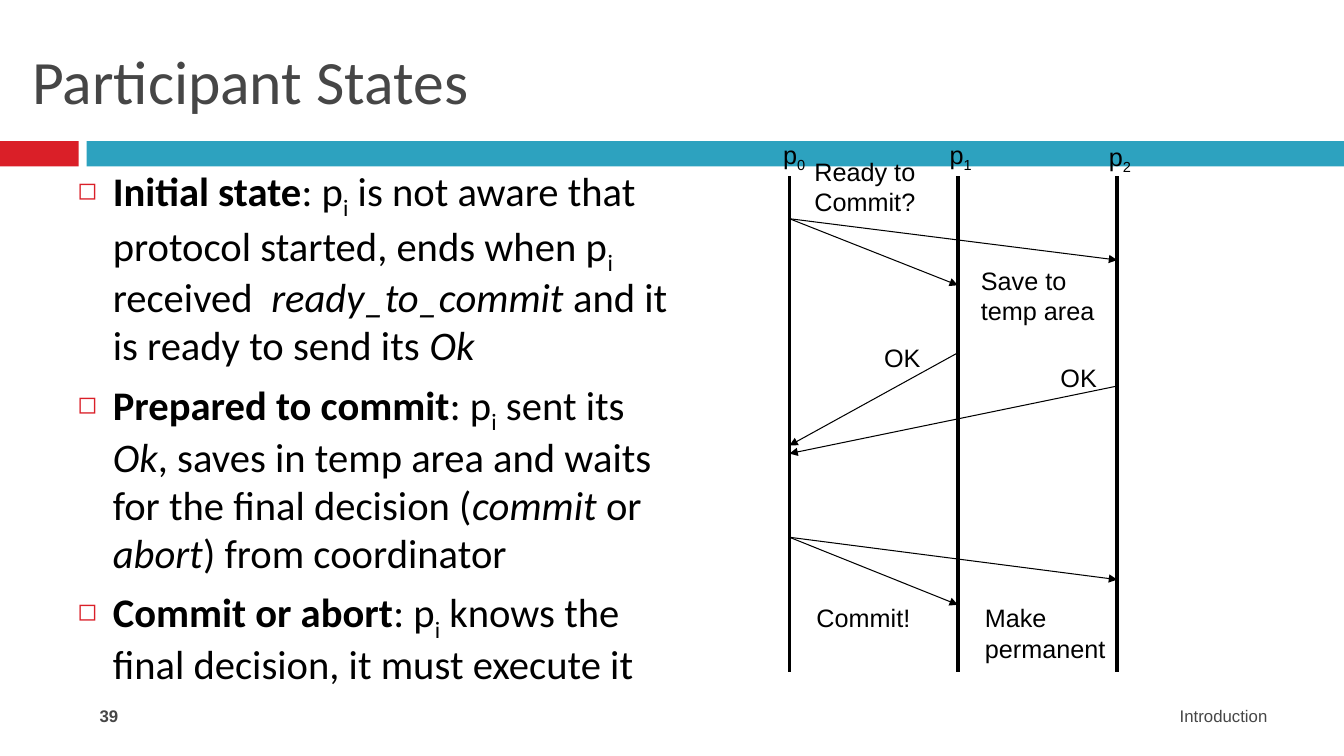
"""Build the "Participant States" slide: three commit states beside a message timeline."""
from dataclasses import dataclass

from lxml.etree import SubElement
from pptx import Presentation
from pptx.dml.color import RGBColor
from pptx.enum.shapes import MSO_CONNECTOR, MSO_SHAPE
from pptx.enum.text import MSO_ANCHOR, PP_ALIGN
from pptx.oxml.ns import qn
from pptx.util import Inches, Pt


@dataclass(frozen=True)
class Theme:
    red: str = "DA1F28"
    teal: str = "2DA2BF"
    grey: str = "464646"
    black: str = "000000"
    heading_font: str = "Calibri"
    label_font: str = "Arial"
    title_size: float = 44
    body_size: float = 29
    label_size: float = 18
    footer_size: float = 12
    lifeline_width: float = 2.5
    message_width: float = 0.75


THEME = Theme()

TITLE = "Participant States"
BANDS = [(0, 0.78, THEME.red), (0.86, 12.47, THEME.teal)]

STATES = [
    [("Initial state", "bold"), (": p", ""), ("i", "sub"),
     (" is not aware that protocol started, ends when p", ""), ("i", "sub"),
     (" received  ", ""), ("ready_to_commit", "italic"),
     (" and it is ready to send its ", ""), ("Ok", "italic")],
    [("Prepared to commit", "bold"), (": p", ""), ("i", "sub"),
     (" sent its ", ""), ("Ok", "italic"),
     (", saves in temp area and waits for the final decision (", ""),
     ("commit", "italic"), (" or ", ""), ("abort", "italic"),
     (") from coordinator", "")],
    [("Commit or abort", "bold"), (": p", ""), ("i", "sub"),
     (" knows the final decision, it must execute it", "")],
]

LIFELINES = [7.83, 9.5, 11.08]
LIFELINE_TOP, LIFELINE_BOTTOM = 1.75, 6.67
PROCESS_LABELS = [(7.67, 1.33), (9.32, 1.33), (10.9, 1.35)]

# sender, time sent, receiver, time received
MESSAGES = [
    (0, 2.17, 2, 2.58), (0, 2.17, 1, 2.83),
    (1, 3.5, 0, 4.42), (2, 3.83, 0, 4.5),
    (0, 5.33, 2, 5.75), (0, 5.33, 1, 6),
]

# lines, left, top, width, wrap
EVENTS = [
    (["Ready to", "Commit?"], 7.98, 1.5, 1.2, False),
    (["Save to temp area"], 9.63, 2.58, 1.62, True),
    (["OK"], 8.67, 3.35, 0.56, False),
    (["OK"], 10.42, 3.55, 0.56, False),
    (["Commit!"], 8, 5.93, 1.13, False),
    (["Make", "permanent"], 9.67, 5.93, 1.4, False),
]

# text, left, width, alignment, style
FOOTERS = [
    ("Introduction", 7.56, 5.11, PP_ALIGN.RIGHT, ""),
    ("39", 0.89, 2.89, PP_ALIGN.LEFT, "bold"),
]


def add_run(paragraph, text, style, size, font, color):
    run = paragraph.add_run()
    run.text = text
    run.font.size = Pt(size)
    run.font.name = font
    run.font.color.rgb = RGBColor.from_string(color)
    run.font.bold = style == "bold"
    run.font.italic = style == "italic"
    if style == "sub":
        run.font._element.set("baseline", "-25000")


def add_text(slide, box, paragraphs, size, font, color, wrap=True):
    frame = slide.shapes.add_textbox(*map(Inches, box)).text_frame
    frame.word_wrap = wrap
    for index, runs in enumerate(paragraphs):
        paragraph = frame.paragraphs[0] if index == 0 else frame.add_paragraph()
        for text, style in runs:
            add_run(paragraph, text, style, size, font, color)
    return frame


def add_bullet(paragraph):
    properties = paragraph._p.get_or_add_pPr()
    properties.set("marL", str(Inches(0.35)))
    properties.set("indent", str(-Inches(0.35)))
    color = SubElement(properties, qn("a:buClr"))
    SubElement(color, qn("a:srgbClr"), val=THEME.red)
    SubElement(properties, qn("a:buSzPct"), val="60000")
    SubElement(properties, qn("a:buChar"), char="◻")


def add_line(slide, start, end, width, arrow=False):
    line = slide.shapes.add_connector(
        MSO_CONNECTOR.STRAIGHT, *map(Inches, (*start, *end)))
    line.line.color.rgb = RGBColor.from_string(THEME.black)
    line.line.width = Pt(width)
    if arrow:
        SubElement(line.line._get_or_add_ln(), qn("a:tailEnd"), type="triangle")
    SubElement(line._element.spPr, qn("a:effectLst"))


def add_heading(slide):
    for left, width, color in BANDS:
        band = slide.shapes.add_shape(
            MSO_SHAPE.RECTANGLE, *map(Inches, (left, 1.4, width, 0.25)))
        band.shadow.inherit = False
        band.fill.solid()
        band.fill.fore_color.rgb = RGBColor.from_string(color)
        band.line.fill.background()
    title = slide.shapes.title
    title.left, title.top, title.width, title.height = map(
        Inches, (0.22, 0.25, 12.89, 1.08))
    title.text_frame.vertical_anchor = MSO_ANCHOR.MIDDLE
    heading = title.text_frame.paragraphs[0]
    heading.alignment = PP_ALIGN.LEFT
    add_run(heading, TITLE, "", THEME.title_size, THEME.heading_font, THEME.grey)


def add_states(slide):
    frame = add_text(slide, (0.67, 1.6, 6.25, 5.4), STATES,
                     THEME.body_size, THEME.heading_font, THEME.black)
    for paragraph in frame.paragraphs:
        paragraph.space_before = Pt(7)
        paragraph.line_spacing = 0.98
        add_bullet(paragraph)


def add_timeline(slide):
    label_style = (THEME.label_size, THEME.label_font, THEME.black)
    for x in LIFELINES:
        add_line(slide, (x, LIFELINE_TOP), (x, LIFELINE_BOTTOM), THEME.lifeline_width)
    for number, (left, top) in enumerate(PROCESS_LABELS):
        add_text(slide, (left, top, 0.43, 0.4),
                 [[("p", ""), (str(number), "sub")]], *label_style, wrap=False)
    for sender, sent, receiver, received in MESSAGES:
        add_line(slide, (LIFELINES[sender], sent), (LIFELINES[receiver], received),
                 THEME.message_width, arrow=True)
    for lines, left, top, width, wrap in EVENTS:
        height = 0.7 if wrap or len(lines) > 1 else 0.4
        add_text(slide, (left, top, width, height),
                 [[(line, "")] for line in lines], *label_style, wrap=wrap)


def add_footers(slide):
    for text, left, width, alignment, style in FOOTERS:
        frame = add_text(slide, (left, 6.95, width, 0.4), [[(text, style)]],
                         THEME.footer_size, THEME.label_font, THEME.grey)
        frame.paragraphs[0].alignment = alignment


def main():
    deck = Presentation()
    deck.slide_width, deck.slide_height = Inches(13.33), Inches(7.5)
    slide = deck.slides.add_slide(deck.slide_layouts.get_by_name("Title Only"))
    add_heading(slide)
    add_states(slide)
    add_footers(slide)
    add_timeline(slide)
    deck.save("out.pptx")


if __name__ == "__main__":
    main()
